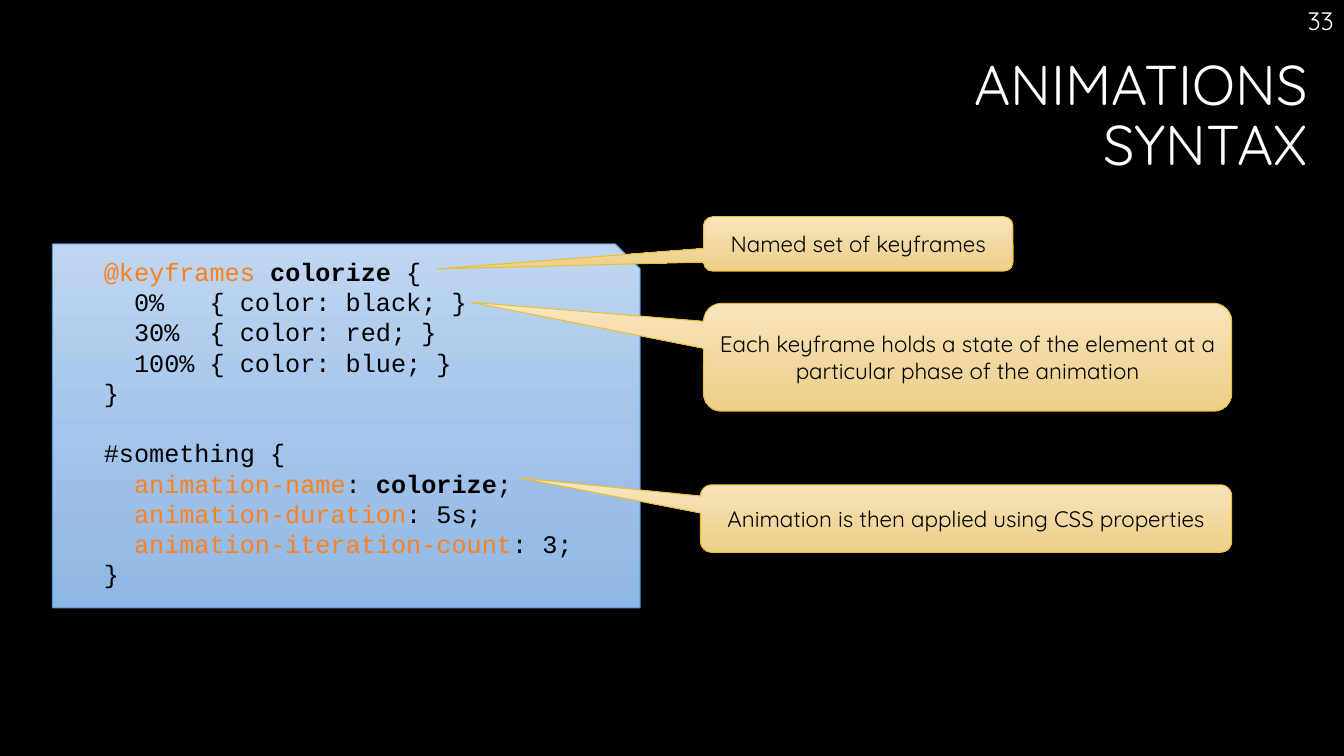
from copy import deepcopy
from dataclasses import dataclass
from typing import NamedTuple

from lxml.etree import SubElement
from pptx import Presentation
from pptx.dml.color import RGBColor
from pptx.enum.shapes import MSO_SHAPE
from pptx.enum.text import MSO_ANCHOR, PP_ALIGN
from pptx.oxml.ns import qn
from pptx.shapes.autoshape import Shape
from pptx.slide import Slide
from pptx.text.text import _Paragraph as Paragraph
from pptx.util import Pt

BLACK = RGBColor(0x00, 0x00, 0x00)
WHITE = RGBColor(0xFF, 0xFF, 0xFF)
ORANGE = RGBColor(0xFE, 0x80, 0x1A)
BLUE_LINE = RGBColor(0x4A, 0x9B, 0xDC)
BLUE_GRADIENT = (
    RGBColor(0xBF, 0xD6, 0xF2),
    RGBColor(0xA4, 0xC4, 0xE9),
    RGBColor(0x8F, 0xB7, 0xE4),
)
GOLD_LINE = RGBColor(0xE9, 0xBF, 0x35)
GOLD_GRADIENT = (
    RGBColor(0xF8, 0xE5, 0xBD),
    RGBColor(0xF1, 0xD8, 0xA0),
    RGBColor(0xEE, 0xCF, 0x89),
)
GRADIENT_POSITIONS = (0, 0.52, 1)
TEXT_FONT = "Quicksand"
CODE_FONT = "Courier New"
CODE_SIZE = 18
CODE_LINE_HEIGHT = 21.6
CODE_CHARACTER_WIDTH = 10.8
CODE_TAB_COLUMNS = (2, 7)


class Box(NamedTuple):
    left: float
    top: float
    width: float
    height: float


class CodeRun(NamedTuple):
    text: str
    color: RGBColor = BLACK
    bold: bool = False


@dataclass(frozen=True)
class CodeLine:
    runs: tuple[CodeRun, ...]
    space_before: float = 0


@dataclass(frozen=True)
class Callout:
    text: str
    box: Box
    tip: tuple[float, float]


CODE_BOX = Box(37.44, 174.24, 419.76, 259.92)
CODE_LINES = (
    CodeLine((CodeRun("@keyframes ", ORANGE), CodeRun("colorize", bold=True), CodeRun(" {"))),
    CodeLine((CodeRun("\t0%\t{ color: black; }"),)),
    CodeLine((CodeRun("\t30%\t{ color: red; }"),)),
    CodeLine((CodeRun("\t100%\t{ color: blue; }"),)),
    CodeLine((CodeRun("}"),)),
    CodeLine((CodeRun("#something {"),), CODE_LINE_HEIGHT),
    CodeLine((
        CodeRun("\tanimation-name", ORANGE),
        CodeRun(": "),
        CodeRun("colorize", bold=True),
        CodeRun(";"),
    )),
    CodeLine((CodeRun("\tanimation-duration", ORANGE), CodeRun(": 5s;"))),
    CodeLine((CodeRun("\tanimation-iteration-count", ORANGE), CodeRun(": 3;"))),
    CodeLine((CodeRun("}"),)),
)
CALLOUTS = (
    Callout("Named set of keyframes", Box(502.56, 154.8, 221.04, 38.88), (-1.36, 0.46)),
    Callout(
        "Each keyframe holds a state of the element at a particular phase of the animation",
        Box(502.56, 216.72, 377.28, 77.04),
        (-0.94, -0.51),
    ),
    Callout(
        "Animation is then applied using CSS properties",
        Box(500.4, 346.32, 379.44, 48.24),
        (-0.84, -0.6),
    ),
)


def add_run(
    paragraph: Paragraph, text: str, font: str, size: float, color: RGBColor, bold: bool = False
) -> None:
    run = paragraph.add_run()
    run.text = text
    run.font.name = font
    run.font.size = Pt(size)
    run.font.color.rgb = color
    run.font.bold = bold


def add_panel(
    slide: Slide, kind: MSO_SHAPE, box: Box, colors: tuple[RGBColor, ...], line: RGBColor
) -> Shape:
    shape = slide.shapes.add_shape(kind, *map(Pt, box))
    shape.shadow.inherit = False
    shape.fill.gradient()
    shape.fill.gradient_angle = 270
    first_stop = shape._element.spPr.find(".//" + qn("a:gs"))
    first_stop.addnext(deepcopy(first_stop))
    for stop, position, color in zip(shape.fill.gradient_stops, GRADIENT_POSITIONS, colors):
        stop.position = position
        stop.color.rgb = color
    shape.line.color.rgb = line
    shape.line.width = Pt(0.75)
    shape.text_frame.word_wrap = True
    return shape


def add_right_text(
    slide: Slide, box: Box, lines: tuple[str, ...], size: float, spacing: float, anchor: MSO_ANCHOR
) -> None:
    frame = slide.shapes.add_textbox(*map(Pt, box)).text_frame
    frame.word_wrap = True
    frame.vertical_anchor = anchor
    paragraph = frame.paragraphs[0]
    paragraph.alignment = PP_ALIGN.RIGHT
    paragraph.line_spacing = spacing
    for index, line in enumerate(lines):
        if index:
            paragraph.add_line_break()
        add_run(paragraph, line, TEXT_FONT, size, WHITE)


def add_code(slide: Slide) -> None:
    shape = add_panel(slide, MSO_SHAPE.SNIP_1_RECTANGLE, CODE_BOX, BLUE_GRADIENT, BLUE_LINE)
    shape.adjustments[0] = 0.068
    frame = shape.text_frame
    frame.vertical_anchor = MSO_ANCHOR.TOP
    frame.margin_left = Pt(36.72)
    frame.margin_top = Pt(0)
    for index, line in enumerate(CODE_LINES):
        paragraph = frame.add_paragraph() if index else frame.paragraphs[0]
        paragraph.alignment = PP_ALIGN.LEFT
        paragraph.line_spacing = Pt(CODE_LINE_HEIGHT)
        paragraph.space_before = Pt(line.space_before)
        tabs = SubElement(paragraph._p.get_or_add_pPr(), qn("a:tabLst"))
        for column in CODE_TAB_COLUMNS:
            position = Pt(column * CODE_CHARACTER_WIDTH)
            SubElement(tabs, qn("a:tab"), pos=str(position), algn="l")
        for run in line.runs:
            add_run(paragraph, run.text, CODE_FONT, CODE_SIZE, run.color, run.bold)


def add_callout(slide: Slide, callout: Callout) -> None:
    shape = add_panel(
        slide, MSO_SHAPE.ROUNDED_RECTANGULAR_CALLOUT, callout.box, GOLD_GRADIENT, GOLD_LINE
    )
    for index, value in enumerate((*callout.tip, 0.167)):
        shape.adjustments[index] = value
    shape.text_frame.vertical_anchor = MSO_ANCHOR.MIDDLE
    paragraph = shape.text_frame.paragraphs[0]
    paragraph.alignment = PP_ALIGN.CENTER
    add_run(paragraph, callout.text, TEXT_FONT, 16, BLACK)


def main() -> None:
    presentation = Presentation()
    presentation.slide_width = Pt(960)
    presentation.slide_height = Pt(540)
    slide = presentation.slides.add_slide(presentation.slide_layouts[6])
    slide.background.fill.solid()
    slide.background.fill.fore_color.rgb = BLACK
    add_right_text(
        slide,
        Box(18.72, 33.12, 922.32, 101.52),
        ("ANIMATIONS", "SYNTAX"),
        40,
        0.9,
        MSO_ANCHOR.MIDDLE,
    )
    add_right_text(slide, Box(752.4, 0, 207.36, 28.8), ("33",), 18, 1.0, MSO_ANCHOR.TOP)
    add_code(slide)
    for callout in CALLOUTS:
        add_callout(slide, callout)
    presentation.save("out.pptx")


if __name__ == "__main__":
    main()
